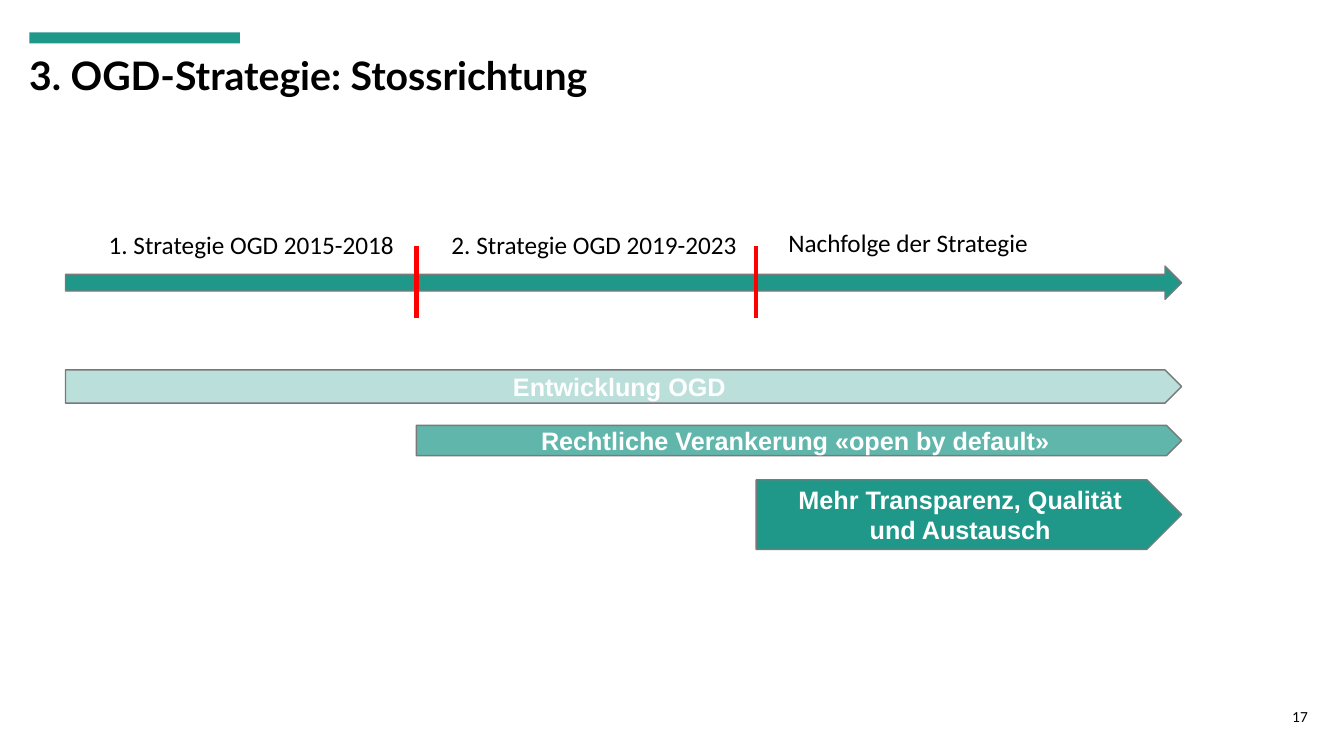
from lxml import etree
from pptx import Presentation
from pptx import util as u
from pptx.dml.color import RGBColor
from pptx.enum import shapes, text
from pptx.oxml import ns

PX = 9144
TEAL, GREY, RED, BLACK, WHITE = "1F988A", "797979", "FF0000", "000000", "FFFFFF"


def px(*lengths):
    """Turn lengths in px into EMU."""
    return [u.Emu(length * PX) for length in lengths]


def color(hex_string):
    """Turn a hex string into a colour."""
    return RGBColor.from_string(hex_string)


def set_font(paragraph, name, size, hex_string, bold=False):
    """Set the font of a whole paragraph."""
    font = paragraph.font
    font.name, font.size, font.bold = name, u.Pt(size), bold
    font.color.rgb = color(hex_string)


def add_label(slide, box, label, name, size, bold=False, wrap=True):
    """Add a text box and return its text frame."""
    frame = slide.shapes.add_textbox(*px(*box)).text_frame
    frame.word_wrap = wrap
    frame.text = label
    set_font(frame.paragraphs[0], name, size, BLACK, bold)
    return frame


def add_block(slide, kind, box, outline=True, opacity=100):
    """Add a teal preset shape."""
    shape = slide.shapes.add_shape(kind, *px(*box))
    shape.shadow.inherit = False
    shape.fill.solid()
    shape.fill.fore_color.rgb = color(TEAL)
    if opacity < 100:
        fill_color = shape.fill._xPr.find(".//" + ns.qn("a:srgbClr"))
        etree.SubElement(fill_color, ns.qn("a:alpha"), val=str(opacity * 1000))
    if outline:
        shape.line.color.rgb = color(GREY)
        shape.line.width = u.Pt(1)
    else:
        shape.line.fill.background()
    return shape


def add_header(slide, box, title):
    """Place the accent bar and the title."""
    left, top, width, height = box
    add_block(slide, shapes.MSO_SHAPE.RECTANGLE, (left + 10, top, 209, 11), outline=False)
    frame = add_label(slide, (left, top + 18, width, height - 18), title, "Lato", 28, bold=True)
    frame.vertical_anchor = text.MSO_ANCHOR.BOTTOM
    frame.paragraphs[0].line_spacing = 0.9


def add_timeline(slide, box, periods, borders):
    """Place the time arrow, its period labels and the borders between them."""
    left, top, width, height = box
    add_block(slide, shapes.MSO_SHAPE.RIGHT_ARROW, (left, top + 43, width, 33))
    for label, label_left, label_top, label_width in periods:
        label_box = (label_left, top + label_top, label_width, 40)
        add_label(slide, label_box, label, "Calibri", 18, wrap=False)
    for x in borders:
        line = slide.shapes.add_connector(
            shapes.MSO_CONNECTOR.STRAIGHT, *px(x, top + 23, x, top + height))
        line.line.color.rgb = color(RED)
        line.line.width = u.Pt(3)
        etree.SubElement(line._element.spPr, ns.qn("a:effectLst"))


def add_phases(slide, box, phases):
    """Place the phase arrows, all ending at the right edge of the box."""
    left, top, width, _ = box
    for label, phase_left, phase_top, height, opacity in phases:
        phase_box = (phase_left, top + phase_top, left + width - phase_left, height)
        shape = add_block(slide, shapes.MSO_SHAPE.PENTAGON, phase_box, opacity=opacity)
        frame = shape.text_frame
        frame.word_wrap = True
        frame.vertical_anchor = text.MSO_ANCHOR.MIDDLE
        frame.text = label
        for paragraph in frame.paragraphs:
            paragraph.alignment = text.PP_ALIGN.CENTER
            set_font(paragraph, "Arial", 18, WHITE, bold=True)


def add_page_number(slide, box, number):
    """Place the page number."""
    frame = add_label(slide, box, number, "Calibri", 11)
    frame.paragraphs[0].alignment = text.PP_ALIGN.RIGHT


def main():
    """Build the slide and save it."""
    presentation = Presentation()
    presentation.slide_width, presentation.slide_height = px(1333, 750)
    slide = presentation.slides.add_slide(presentation.slide_layouts[6])

    start, first_border, second_border, width = 65, 413, 750, 1107
    add_header(slide, (19, 32, 1288, 71), "3. OGD-Strategie: Stossrichtung")
    add_timeline(slide, (start, 221, width, 94), [
        ("1. Strategie OGD 2015-2018", 98, 2, 306),
        ("2. Strategie OGD 2019-2023", 438, 2, 306),
        ("Nachfolge der Strategie", 772, 0, 261),
    ], (first_border, second_border))
    add_phases(slide, (start, 367, width, 178), [
        ("Entwicklung OGD", start, 0, 33, 30),
        ("Rechtliche Verankerung «open by default»", first_border, 55, 30, 70),
        ("Mehr Transparenz, Qualität\nund Austausch", second_border, 109, 69, 100),
    ])
    add_page_number(slide, (1258, 697, 49, 29), "17")
    presentation.save("out.pptx")


if __name__ == "__main__":
    main()
